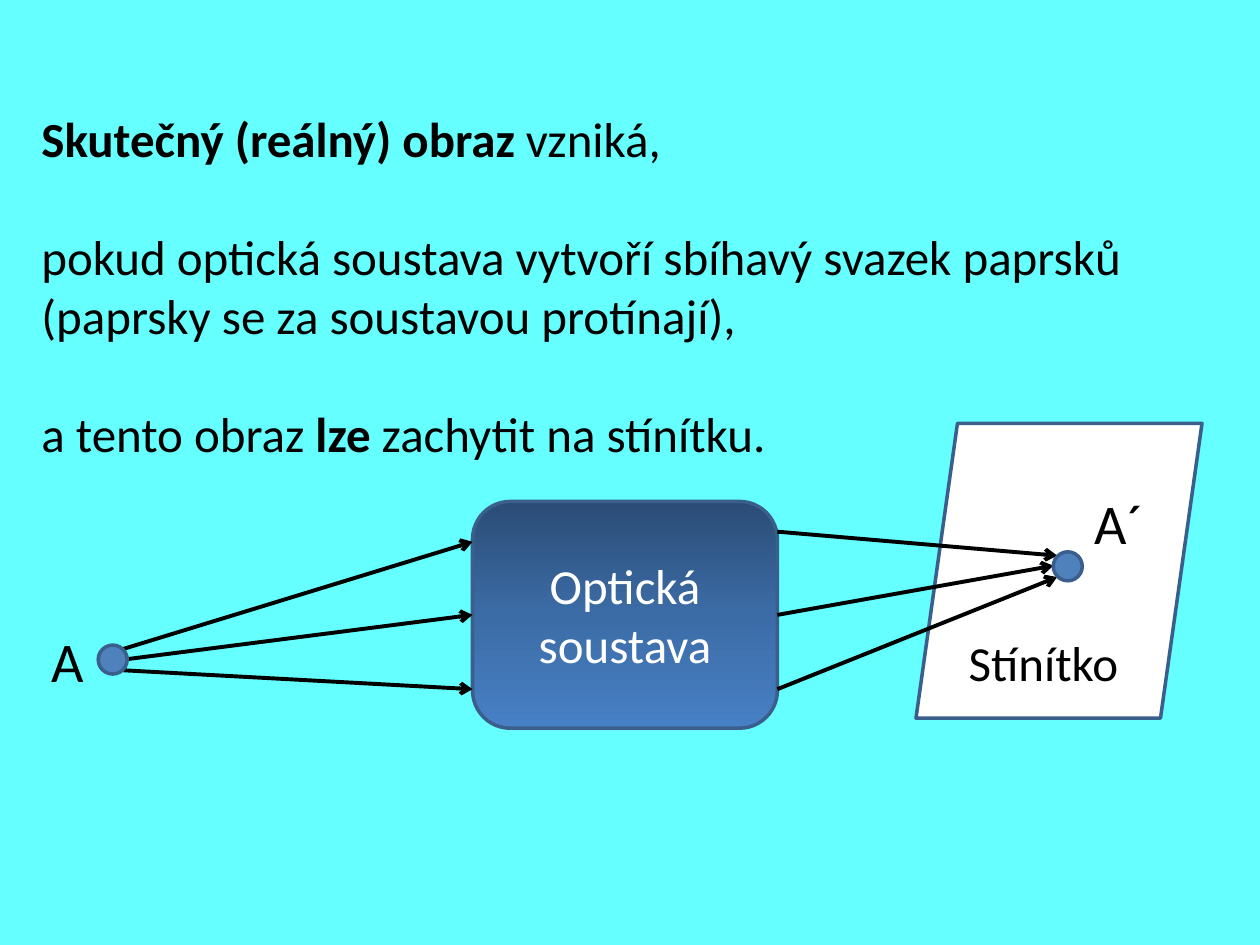
from copy import deepcopy

from lxml.etree import SubElement
from pptx import Presentation
from pptx.dml.color import RGBColor
from pptx.enum.shapes import MSO_CONNECTOR, MSO_SHAPE
from pptx.enum.text import MSO_ANCHOR, PP_ALIGN
from pptx.oxml.ns import qn
from pptx.util import Inches, Pt


def paint(color_format, value):
    color_format.rgb = RGBColor.from_string(value)


def add_outlined(kind, left, top, width, height):
    shape = page.shapes.add_shape(
        kind, Inches(left), Inches(top), Inches(width), Inches(height))
    shape.shadow.inherit = False
    shape.fill.solid()
    paint(shape.line.color, "3A5F8C")
    shape.line.width = Pt(2)
    return shape


deck = Presentation()
deck.slide_width, deck.slide_height = Inches(10), Inches(7.5)
page = deck.slides.add_slide(deck.slide_layouts[6])
page.background.fill.solid()
paint(page.background.fill.fore_color, "66FFFF")

# Screen
screen = add_outlined(MSO_SHAPE.PARALLELOGRAM, 7.27, 3.36, 2.27, 2.34)
screen.adjustments[0] = 0.145
paint(screen.fill.fore_color, "FFFFFF")

# Explanation: each paragraph is a list of (text, bold)
statements = [
    [("Skutečný (reálný) obraz", True), (" vzniká,", False)],
    [("pokud optická soustava vytvoří sbíhavý svazek paprsků "
      "(paprsky se za soustavou protínají),", False)],
    [("a tento obraz ", False), ("lze", True),
     (" zachytit na stínítku.", False)],
]
box = page.shapes.add_textbox(
    Inches(0.23), Inches(0.81), Inches(9.45), Inches(5.28))
frame = box.text_frame
frame.word_wrap = True
for index, statement in enumerate(statements):
    para = frame.paragraphs[0] if index == 0 else frame.add_paragraph()
    para.font.name, para.font.size = "Calibri", Pt(28)
    paint(para.font.color, "000000")
    if index:
        para.space_before = Pt(34)
    for text, bold in statement:
        span = para.add_run()
        span.text = text
        span.font.bold = bold

# Optical system
system = add_outlined(MSO_SHAPE.ROUNDED_RECTANGLE, 3.75, 3.98, 2.42, 1.8)
system.fill.gradient()
system.fill.gradient_angle = 270
first_stop = system.fill._fill._gradFill.find(qn("a:gsLst"))[0]
first_stop.addnext(deepcopy(first_stop))
stops = [(0, "2A4C75"), (0.5, "3C6CA6"), (1, "4780C5")]
for stop, (position, color) in zip(system.fill.gradient_stops, stops):
    stop.position = position
    paint(stop.color, color)
frame = system.text_frame
frame.word_wrap = True
frame.vertical_anchor = MSO_ANCHOR.MIDDLE
para = frame.paragraphs[0]
para.text = "Optická soustava"
para.alignment = PP_ALIGN.CENTER
para.font.name, para.font.size = "Calibri", Pt(28)
paint(para.font.color, "FFFFFF")

# Rays: start, end, and which end joins the middle of a system side
rays = [
    (0.98, 5.15, 3.75, 4.3, None),
    (1.02, 5.23, 3.75, 4.88, "end"),
    (0.98, 5.32, 3.75, 5.47, None),
    (6.17, 4.22, 8.39, 4.41, None),
    (6.17, 4.88, 8.36, 4.49, "begin"),
    (6.17, 5.47, 8.39, 4.58, None),
]
for x1, y1, x2, y2, joined in rays:
    ray = page.shapes.add_connector(
        MSO_CONNECTOR.STRAIGHT, Inches(x1), Inches(y1), Inches(x2), Inches(y2))
    if joined == "end":
        ray.end_connect(system, 1)
    elif joined == "begin":
        ray.begin_connect(system, 3)
    paint(ray.line.color, "000000")
    ray.line.width = Pt(2.25)
    SubElement(ray.line._get_or_add_ln(), qn("a:tailEnd"), type="arrow")
    SubElement(ray._element.spPr, qn("a:effectLst"))

# Object point and image point
for left, top in [(0.78, 5.12), (8.36, 4.38)]:
    point = add_outlined(MSO_SHAPE.OVAL, left, top, 0.23, 0.23)
    paint(point.fill.fore_color, "4F81BD")

# Labels
labels = [
    ("A", 0.31, 4.92, 0.5, 0.64, 32),
    ("A´", 8.59, 3.83, 0.7, 0.64, 32),
    ("Stínítko", 7.59, 4.97, 1.5, 0.57, 28),
]
for text, left, top, width, height, size in labels:
    label = page.shapes.add_textbox(
        Inches(left), Inches(top), Inches(width), Inches(height))
    label.text_frame.word_wrap = True
    para = label.text_frame.paragraphs[0]
    para.text = text
    para.font.name, para.font.size = "Calibri", Pt(size)
    paint(para.font.color, "000000")

deck.save("out.pptx")
